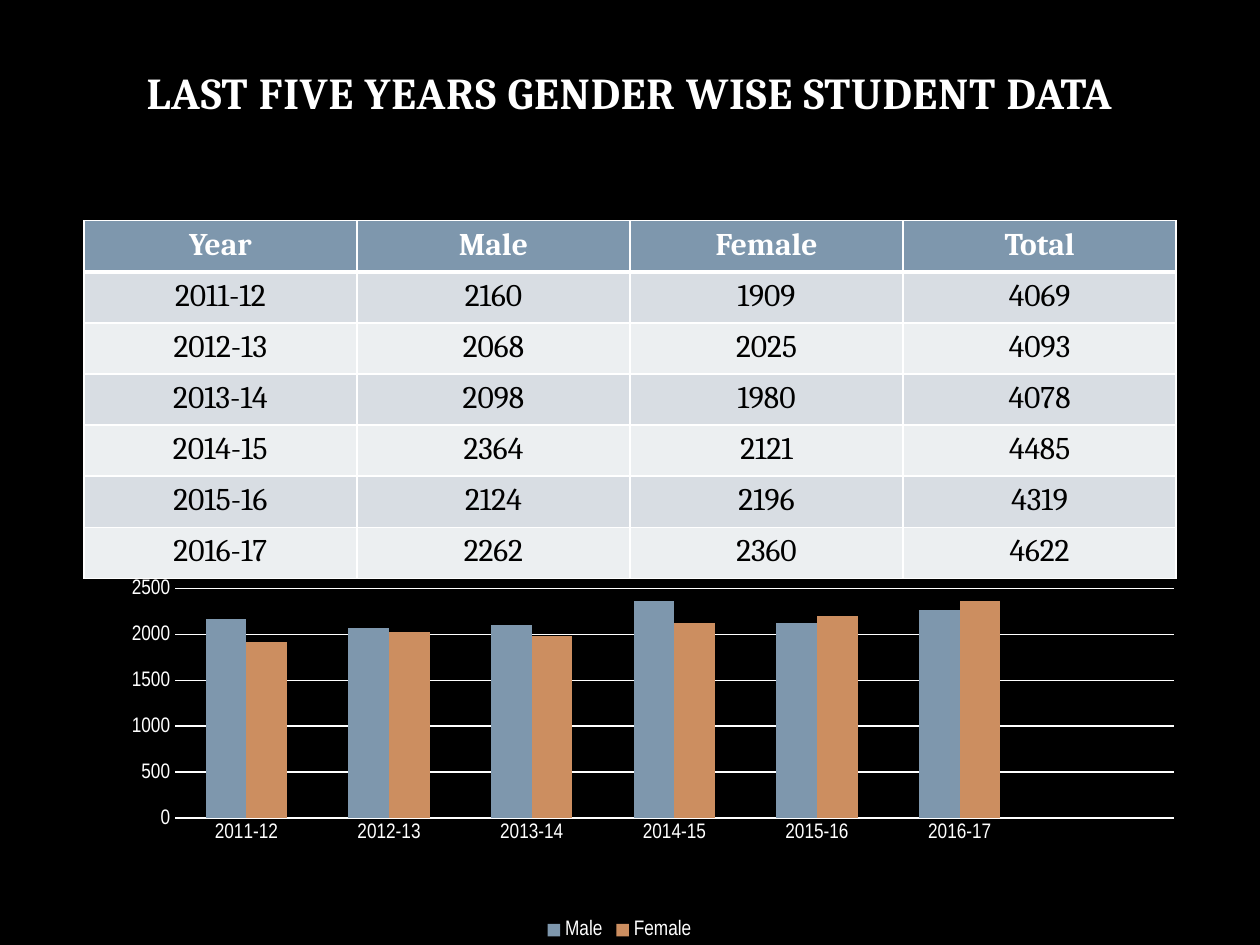
from lxml import etree
from pptx import Presentation
from pptx.chart.data import CategoryChartData
from pptx.dml.color import RGBColor
from pptx.enum.chart import XL_CHART_TYPE, XL_LEGEND_POSITION, XL_TICK_MARK
from pptx.enum.text import MSO_ANCHOR, PP_ALIGN
from pptx.oxml import parse_xml
from pptx.oxml.ns import nsdecls, qn
from pptx.util import Cm, Pt

CENTER = PP_ALIGN.CENTER
BOTTOM = MSO_ANCHOR.BOTTOM
COLUMNS = XL_CHART_TYPE.COLUMN_CLUSTERED
LEGEND_BOTTOM = XL_LEGEND_POSITION.BOTTOM
NO_TICK = XL_TICK_MARK.NONE

BLACK = RGBColor(0x00, 0x00, 0x00)
WHITE = RGBColor(0xFF, 0xFF, 0xFF)
BLUE = RGBColor(0x7E, 0x97, 0xAD)
ORANGE = RGBColor(0xCC, 0x8E, 0x60)
BAND_DARK = RGBColor(0xD8, 0xDD, 0xE3)
BAND_LIGHT = RGBColor(0xEC, 0xEF, 0xF1)

SERIF = "Cambria"
NARROW = "Arial Narrow"
HEADINGS = ("Year", "Male", "Female", "Total")
STUDENTS = (
    ("2011-12", 2160, 1909, 4069),
    ("2012-13", 2068, 2025, 4093),
    ("2013-14", 2098, 1980, 4078),
    ("2014-15", 2364, 2121, 4485),
    ("2015-16", 2124, 2196, 4319),
    ("2016-17", 2262, 2360, 4622),
)


def style_font(font, name, size, color, bold=False):
    """Set the face, size, colour and weight of a font."""
    font.name = name
    font.size = Pt(size)
    font.color.rgb = color
    font.bold = bold


def add_title(page, left, top, width, height):
    """Place the centred slide title."""
    box = page.shapes.add_textbox(left, top, width, height)
    frame = box.text_frame
    frame.word_wrap = True
    frame.vertical_anchor = BOTTOM
    para = frame.paragraphs[0]
    para.text = "LAST FIVE YEARS GENDER WISE STUDENT DATA"
    para.alignment = CENTER
    style_font(para.font, SERIF, 25.2, WHITE, True)
    for span in box.element.iter(qn("a:r")):
        span.get_or_add_rPr().set("spc", "50")


def set_borders(cell, top, bottom):
    """Draw white borders with the given top and bottom widths in points."""
    properties = cell._tc.get_or_add_tcPr()
    widths = {"lnL": 1, "lnR": 1, "lnT": top, "lnB": bottom}
    for position, (side, width) in enumerate(widths.items()):
        properties.insert(position, parse_xml(
            f'<a:{side} {nsdecls("a")} w="{Pt(width)}"><a:solidFill>'
            f'<a:srgbClr val="{WHITE}"/></a:solidFill></a:{side}>'))


def add_student_table(page, left, top, width, height):
    """Place the table of students by year and gender."""
    rows = (HEADINGS, *STUDENTS)
    table = page.shapes.add_table(
        len(rows), len(HEADINGS), left, top, width, height).table
    for row_index, row in enumerate(rows):
        is_header = row_index == 0
        band = BAND_DARK if row_index % 2 else BAND_LIGHT
        for column_index, value in enumerate(row):
            cell = table.cell(row_index, column_index)
            cell.fill.solid()
            cell.fill.fore_color.rgb = BLUE if is_header else band
            set_borders(cell, 3 if row_index == 1 else 1, 3 if is_header else 1)
            para = cell.text_frame.paragraphs[0]
            para.text = str(value)
            para.alignment = CENTER
            style_font(para.font, SERIF, 18, WHITE if is_header else BLACK, is_header)


def set_plot_layout(chart, **fractions):
    """Fix the inner plot area to fractions of the chart."""
    plot_area = chart._chartSpace.chart.plotArea
    for old_layout in plot_area.findall(qn("c:layout")):
        plot_area.remove(old_layout)
    layout = etree.Element(qn("c:layout"))
    manual = etree.SubElement(layout, qn("c:manualLayout"))
    settings = {"layoutTarget": "inner", "xMode": "edge", "yMode": "edge", **fractions}
    for tag, value in settings.items():
        etree.SubElement(manual, qn(f"c:{tag}")).set("val", str(value))
    plot_area.insert(0, layout)


def add_gender_chart(page, left, top, width, height):
    """Place the columns, rounded to tens, with a spare slot after the last year."""
    years, male, female, _ = zip(*STUDENTS)
    data = CategoryChartData()
    data.categories = (*years, "")
    for name, counts in (("Male", male), ("Female", female)):
        data.add_series(name, (*(round(count, -1) for count in counts), None))
    chart = page.shapes.add_chart(COLUMNS, left, top, width, height, data).chart
    style_font(chart.font, NARROW, 12, WHITE)
    chart._chartSpace.chart.addnext(parse_xml(
        f'<c:spPr {nsdecls("c", "a")}><a:noFill/><a:ln><a:noFill/></a:ln></c:spPr>'))
    chart.has_title = False
    chart.has_legend = True
    chart.legend.position = LEGEND_BOTTOM
    chart.legend.include_in_layout = False
    style_font(chart.legend.font, NARROW, 12, WHITE)

    plot = chart.plots[0]
    plot.gap_width = 150
    plot.overlap = 0
    plot.vary_by_categories = False
    for series, color in zip(plot.series, (BLUE, ORANGE)):
        series.format.fill.solid()
        series.format.fill.fore_color.rgb = color

    for axis in (chart.category_axis, chart.value_axis):
        axis.major_tick_mark = NO_TICK
        axis.minor_tick_mark = NO_TICK
        axis.format.line.fill.background()
        style_font(axis.tick_labels.font, NARROW, 12, WHITE)
    scale = chart.value_axis
    scale.minimum_scale, scale.maximum_scale, scale.major_unit = 0, 2500, 500
    scale.has_major_gridlines = True
    grid = scale.major_gridlines.format.line
    grid.color.rgb = WHITE
    grid.width = Pt(0.75)
    set_plot_layout(chart, x=0.107, y=0.092, w=0.883, h=0.585)


def main():
    """Build the slide and save it."""
    deck = Presentation()
    deck.slide_width, deck.slide_height = Cm(25.4), Cm(19.05)
    page = deck.slides.add_slide(deck.slide_layouts[6])
    page.background.fill.solid()
    page.background.fill.fore_color.rgb = BLACK
    add_title(page, Cm(1.7), Cm(0.77), Cm(22), Cm(1.75))
    add_student_table(page, Cm(1.69), Cm(4.45), Cm(22.02), Cm(7.21))
    add_gender_chart(page, Cm(1.09), Cm(11.13), Cm(22.8), Cm(7.92))
    deck.save("out.pptx")


if __name__ == "__main__":
    main()
